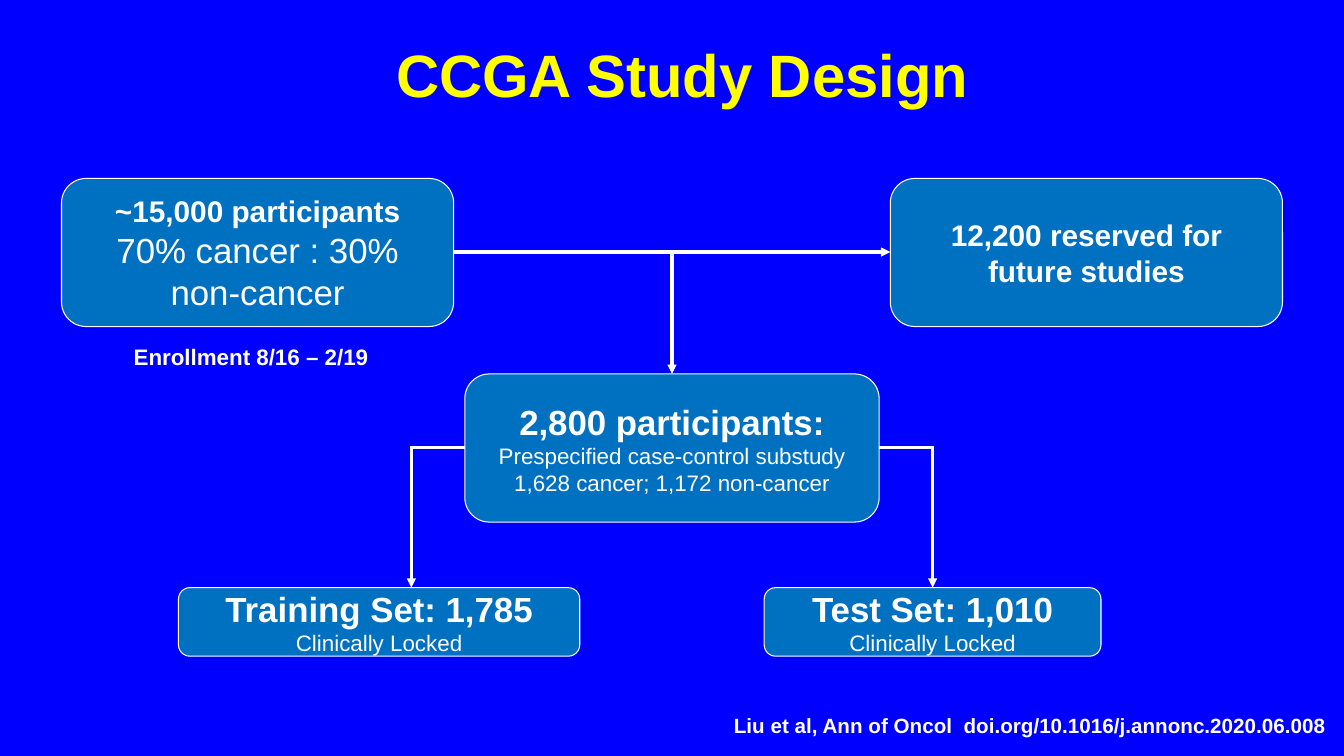
"""Build the CCGA study design flow slide."""
from dataclasses import dataclass

from lxml import etree
from pptx import Presentation
from pptx.dml.color import RGBColor
from pptx.enum.shapes import MSO_CONNECTOR, MSO_SHAPE
from pptx.enum.text import MSO_ANCHOR, MSO_AUTO_SIZE, PP_ALIGN
from pptx.oxml.ns import qn
from pptx.util import Inches, Pt

STRAIGHT = MSO_CONNECTOR.STRAIGHT
ROUNDED = MSO_SHAPE.ROUNDED_RECTANGLE
TOP, MIDDLE = MSO_ANCHOR.TOP, MSO_ANCHOR.MIDDLE
LEFT, CENTER = PP_ALIGN.LEFT, PP_ALIGN.CENTER
NO_AUTOFIT = MSO_AUTO_SIZE.NONE
TITLE_ONLY = 5


@dataclass(frozen=True)
class Theme:
    """Colours, font and type sizes of the slide."""
    background: RGBColor = RGBColor(0x00, 0x00, 0xFF)
    box: RGBColor = RGBColor(0x00, 0x70, 0xC0)
    title: RGBColor = RGBColor(0xFF, 0xFF, 0x00)
    text: RGBColor = RGBColor(0xFF, 0xFF, 0xFF)
    font: str = "Arial"
    title_size: float = 42.7
    large: float = 24.9
    medium: float = 21.3
    small: float = 16
    citation: float = 14.7
    outline: float = 0.75
    connector: float = 2.25
    inset: float = 0.13


class FlowSlide:
    """Holds the theme and the slide, and draws each kind of element."""

    def __init__(self, slide, theme):
        """Keep the slide and paint its background."""
        self.slide, self.theme = slide, theme
        slide.background.fill.solid()
        slide.background.fill.fore_color.rgb = theme.background

    def set_text(self, shape, lines, anchor=MIDDLE, align=CENTER, inset=None, color=None):
        """Fill a shape with (text, size, bold) lines."""
        frame = shape.text_frame
        frame.text = "\n".join(text for text, _, _ in lines)
        frame.auto_size = NO_AUTOFIT
        frame.word_wrap = True
        frame.vertical_anchor = anchor
        margin = Inches(self.theme.inset if inset is None else inset)
        frame.margin_left = frame.margin_right = margin
        frame.margin_top = frame.margin_bottom = margin
        for paragraph, (_, size, bold) in zip(frame.paragraphs, lines):
            paragraph.alignment = align
            for run in paragraph.runs:
                run.font.name = self.theme.font
                run.font.size = Pt(size)
                run.font.bold = bold
                run.font.color.rgb = color or self.theme.text

    def title(self, text, left, top, width, height):
        """Place the title placeholder and fill it."""
        shape = self.slide.shapes.title
        shape.left, shape.top = Inches(left), Inches(top)
        shape.width, shape.height = Inches(width), Inches(height)
        self.set_text(shape, [(text, self.theme.title_size, True)], color=self.theme.title)

    def box(self, left, top, width, height, lines):
        """Draw a rounded box with text."""
        shape = self.slide.shapes.add_shape(
            ROUNDED, Inches(left), Inches(top), Inches(width), Inches(height))
        shape.shadow.inherit = False
        shape.fill.solid()
        shape.fill.fore_color.rgb = self.theme.box
        shape.line.color.rgb = self.theme.text
        shape.line.width = Pt(self.theme.outline)
        self.set_text(shape, lines)

    def label(self, left, top, width, height, text, size, **layout):
        """Add a bold line of free text."""
        shape = self.slide.shapes.add_textbox(
            Inches(left), Inches(top), Inches(width), Inches(height))
        self.set_text(shape, [(text, size, True)], anchor=TOP, **layout)
        return shape

    def connector(self, start, end, arrow=True):
        """Draw a straight line, with an arrowhead at its end if asked."""
        line = self.slide.shapes.add_connector(
            STRAIGHT, *(Inches(value) for value in (*start, *end)))
        line.line.color.rgb = self.theme.text
        line.line.width = Pt(self.theme.connector)
        properties = line._element.spPr
        etree.SubElement(properties, qn("a:effectLst"))
        if arrow:
            outline = properties.find(qn("a:ln"))
            etree.SubElement(outline, qn("a:tailEnd"), type="triangle")


def main():
    """Lay out the study flow and save it."""
    presentation = Presentation()
    presentation.slide_width, presentation.slide_height = Inches(13.33), Inches(7.5)
    slide = presentation.slides.add_slide(presentation.slide_layouts[TITLE_ONLY])
    theme = Theme()
    flow = FlowSlide(slide, theme)
    flow.title("CCGA Study Design", 0.35, 0.5, 12.84, 0.47)

    cohort_top, cohort_width, box_height = 1.77, 3.89, 1.47
    enrolled_left, reserved_left = 0.61, 8.83
    substudy_left, substudy_top, substudy_width = 4.61, 3.71, 4.11
    substudy_right = substudy_left + substudy_width
    set_top, set_height = 5.83, 0.68
    flow_y, branch_y = 2.5, 4.44
    center_x = substudy_left + substudy_width / 2

    branches = [
        ("Training Set: 1,785", 1.77, 3.98, substudy_left, 4.08),
        ("Test Set: 1,010", 7.58, 3.34, substudy_right, 9.25),
    ]
    for heading, left, width, edge_x, branch_x in branches:
        flow.connector((edge_x, branch_y), (branch_x, branch_y), arrow=False)
        flow.connector((branch_x, branch_y - 0.02), (branch_x, set_top))
        flow.box(left, set_top, width, set_height, [
            (heading, theme.large, True),
            ("Clinically Locked", theme.small, False)])

    flow.box(enrolled_left, cohort_top, cohort_width, box_height, [
        ("~15,000 participants", theme.medium, True),
        ("70% cancer : 30% non-cancer", theme.large, False)])
    flow.box(reserved_left, cohort_top, cohort_width, box_height, [
        ("12,200 reserved for future studies", theme.medium, True)])
    flow.connector((enrolled_left + cohort_width, flow_y), (reserved_left, flow_y))
    flow.connector((center_x, flow_y), (center_x, substudy_top))
    flow.box(substudy_left, substudy_top, substudy_width, box_height, [
        ("2,800 participants:", theme.large, True),
        ("Prespecified case-control substudy", theme.small, False),
        ("1,628 cancer; 1,172 non-cancer", theme.small, False)])

    flow.label(0.8, 3.27, 3.38, 0.6, "Enrollment 8/16 – 2/19", theme.small)
    citation = flow.label(
        7.18, 7.02, 6.12, 0.35,
        "Liu et al, Ann of Oncol  doi.org/10.1016/j.annonc.2020.06.008",
        theme.citation, align=LEFT, inset=0.05)
    citation.text_frame.margin_left = citation.text_frame.margin_right = Inches(0.1)
    citation.text_frame.word_wrap = False
    presentation.save("out.pptx")


if __name__ == "__main__":
    main()
